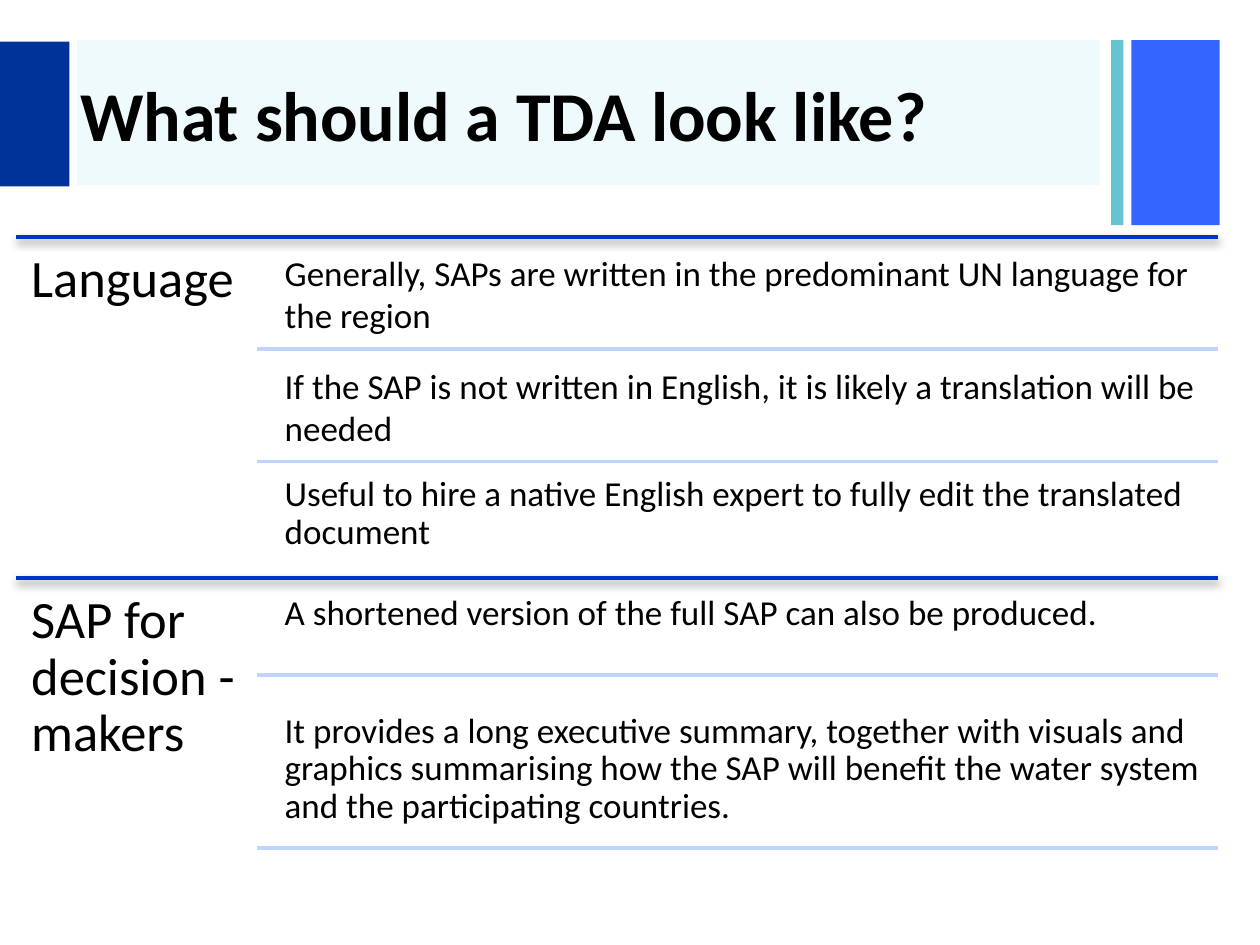
from lxml import etree
from pptx import Presentation
from pptx.dml.color import RGBColor
from pptx.enum.shapes import MSO_CONNECTOR, MSO_SHAPE
from pptx.enum.text import MSO_ANCHOR
from pptx.oxml.ns import qn
from pptx.util import Cm, Pt

RECTANGLE = MSO_SHAPE.RECTANGLE
STRAIGHT = MSO_CONNECTOR.STRAIGHT
TOP, MIDDLE = MSO_ANCHOR.TOP, MSO_ANCHOR.MIDDLE


def color(value):
    return RGBColor.from_string(value)


def add_text(text, left, top, width, height, inset, size, bold=False, anchor=TOP, spacing=1):
    box = page.shapes.add_textbox(Cm(left), Cm(top), Cm(width), Cm(height))
    frame = box.text_frame
    frame_format = {"word_wrap": True, "vertical_anchor": anchor}
    for side in ("left", "top", "right", "bottom"):
        frame_format[f"margin_{side}"] = Cm(inset)
    for name, value in frame_format.items():
        setattr(frame, name, value)
    para = frame.paragraphs[0]
    para.line_spacing = spacing
    span = para.add_run()
    span.text = text
    for name, value in {"name": "Calibri", "size": Pt(size), "bold": bold}.items():
        setattr(span.font, name, value)
    span.font.color.rgb = color("000000")


deck = Presentation()
deck.slide_width, deck.slide_height = Cm(25.4), Cm(19.05)
page = deck.slides.add_slide(deck.slide_layouts[6])

# Header blocks: left, top, width, height, fill, opacity in percent
for left, top, width, height, fill, opacity in (
    (22.81, 0.81, 1.78, 3.73, "3366FF", 100),
    (22.4, 0.81, 0.25, 3.73, "65C4D2", 100),
    (1.55, 0.81, 20.62, 2.92, "14C5D0", 7),
    (0, 0.84, 1.4, 2.92, "003399", 100),
):
    block = page.shapes.add_shape(RECTANGLE, Cm(left), Cm(top), Cm(width), Cm(height))
    block.shadow.inherit = False
    block.line.fill.background()
    block.fill.solid()
    block.fill.fore_color.rgb = color(fill)
    if opacity < 100:
        tone = block.fill._xPr.find(".//" + qn("a:srgbClr"))
        etree.SubElement(tone, qn("a:alpha"), val=str(opacity * 1000))

# Title
add_text("What should a TDA look like?", 1.37, 0.86, 21.01, 2.84, 0.25, 40, True, MIDDLE)

# Rules: thick ones head the sections, thin ones close the points
rules = [(0.33, top, "0033CC", 2.25) for top in (4.78, 11.66)]
rules += [(5.18, top, "BDD4FF", 2) for top in (7.04, 9.3, 13.61, 17.09)]
for left, top, tint, weight in rules:
    rule = page.shapes.add_connector(STRAIGHT, Cm(left), Cm(top), Cm(24.56), Cm(top))
    rule.line.color.rgb = color(tint)
    rule.line.width = Pt(weight)
    effects = etree.SubElement(rule._element.spPr, qn("a:effectLst"))
    if weight > 2:
        shadow = etree.SubElement(effects, qn("a:outerShdw"), blurRad=str(Pt(5)),
                                  dist=str(Pt(2)), dir="5400000", rotWithShape="0")
        tone = etree.SubElement(shadow, qn("a:srgbClr"), val="808080")
        etree.SubElement(tone, qn("a:alpha"), val="75000")

# Sections: heading, top, then points as text, top, height, line spacing
sections = (
    ("Language", 4.78, (
        ("Generally, SAPs are written in the predominant UN language for the region",
         4.88, 2.16, 1),
        ("If the SAP is not written in English, it is likely a translation will be needed",
         7.14, 2.16, 1),
        ("Useful to hire a native English expert to fully edit the translated document",
         9.4, 2.16, 0.9),
    )),
    ("SAP for decision - makers", 11.66, (
        ("A shortened version of the full SAP can also be produced.", 11.81, 3.2, 0.9),
        ("It provides a long executive summary, together with visuals and graphics "
         "summarising how the SAP will benefit the water system and the participating "
         "countries.", 14.17, 3.2, 0.9),
    )),
)
for heading, heading_top, points in sections:
    add_text(heading, 0.33, heading_top, 4.85, 6.91, 0.3, 30, spacing=0.9)
    for point, top, height, spacing in points:
        add_text(point, 5.54, top, 19.02, height, 0.2, 20, spacing=spacing)

deck.save("out.pptx")
